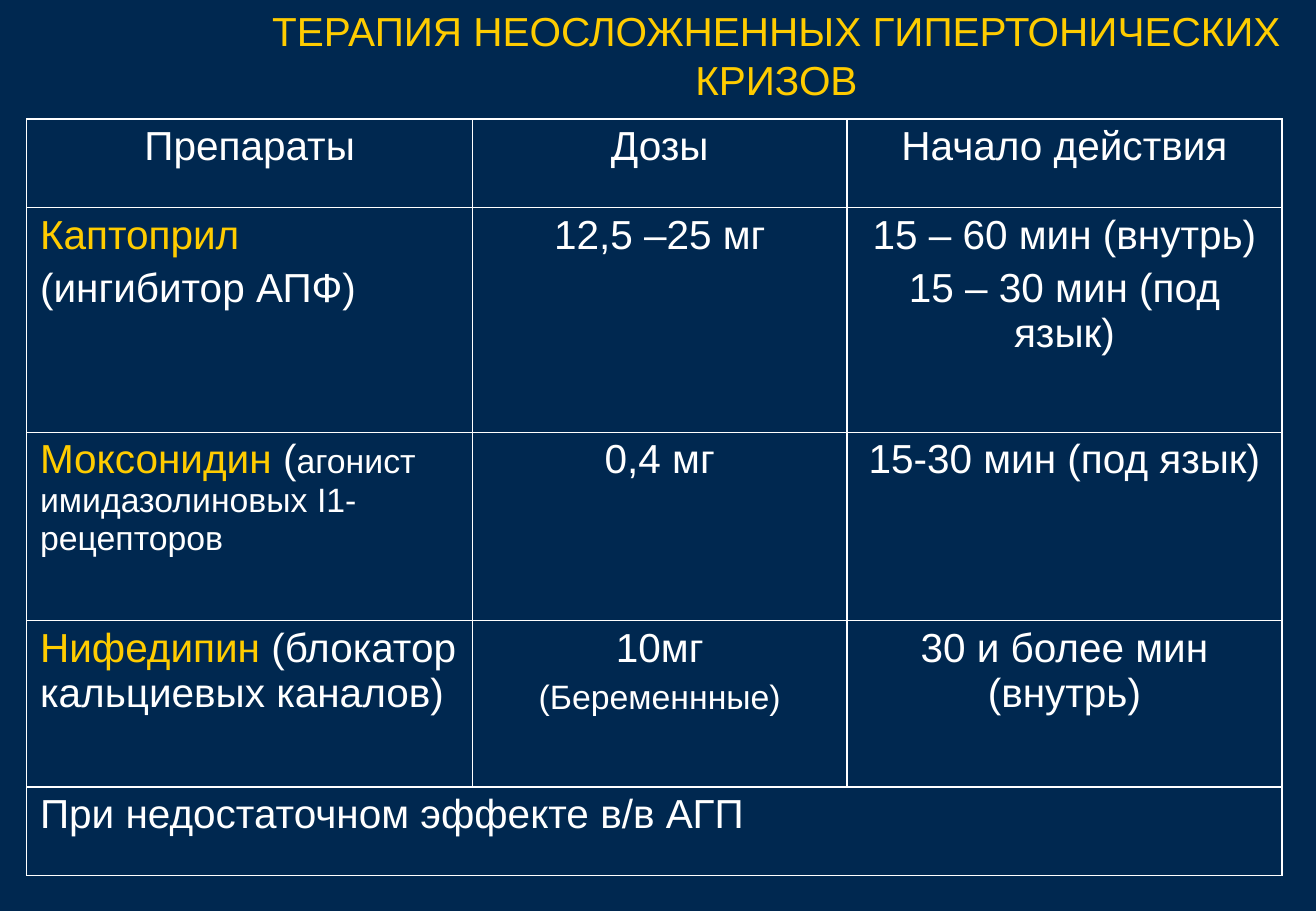
from lxml.etree import SubElement
from pptx import Presentation
from pptx.dml.color import RGBColor
from pptx.enum.text import MSO_ANCHOR, PP_ALIGN
from pptx.oxml.ns import qn
from pptx.util import Inches, Pt

NAVY = RGBColor(0x00, 0x28, 0x50)
GOLD = RGBColor(0xFF, 0xCC, 0x00)
WHITE = RGBColor(0xFF, 0xFF, 0xFF)

TITLE = "ТЕРАПИЯ НЕОСЛОЖНЕННЫХ ГИПЕРТОНИЧЕСКИХ КРИЗОВ"
COLUMN_WIDTHS = [3.67, 3.08, 3.58]
ROW_HEIGHTS = [0.73, 1.85, 1.55, 1.37, 0.73]

DRUG = {"color": GOLD}
SMALL = {"size": 20}
ROWS = [
    [[[("Препараты", {})]], [[("Дозы", {})]], [[("Начало действия", {})]]],
    [
        [[("Каптоприл", DRUG)], [("(ингибитор АПФ)", {})]],
        [[("12,5 –25 мг", {})]],
        [[("15 – 60 мин (внутрь)", {})], [("15 – 30 мин (под язык)", {})]],
    ],
    [
        [[("Моксонидин", DRUG), (" (", {}),
          ("агонист имидазолиновых I1- рецепторов", SMALL)]],
        [[("0,4 мг", {})]],
        [[("15-30 мин (под язык)", {})]],
    ],
    [
        [[("Нифедипин ", DRUG), ("(блокатор кальциевых каналов)", {})]],
        [[("10мг", {})], [("(Беременнные)", SMALL)]],
        [[("30 и более мин (внутрь)", {})]],
    ],
    [[[("При недостаточном эффекте в/в АГП", {})]]],
]


def add_text(para, text, size=24, color=WHITE):
    span = para.add_run()
    span.text = text
    span.font.name = "Arial"
    span.font.size = Pt(size)
    span.font.bold = False
    span.font.color.rgb = color


def fill_cell(cell, paragraphs, align):
    cell.vertical_anchor = MSO_ANCHOR.TOP
    cell.margin_left = cell.margin_right = Inches(0.11)
    cell.margin_top = cell.margin_bottom = Inches(0.04)
    frame = cell.text_frame
    for index, spans in enumerate(paragraphs):
        para = frame.add_paragraph() if index else frame.paragraphs[0]
        para.alignment = align
        para.space_before = Pt(4.8 if index else 0)
        for text, style in spans:
            add_text(para, text, **style)


def outline_cell(cell):
    properties = cell._tc.get_or_add_tcPr()
    for side in ("a:lnL", "a:lnR", "a:lnT", "a:lnB"):
        line = SubElement(properties, qn(side), w=str(Pt(1)))
        fill = SubElement(line, qn("a:solidFill"))
        SubElement(fill, qn("a:srgbClr"), val=str(WHITE))
    cell.fill.background()


def place_title(page, left, top, width, height):
    box = page.shapes.title
    box.left, box.top = Inches(left), Inches(top)
    box.width, box.height = Inches(width), Inches(height)
    frame = box.text_frame
    frame.word_wrap = True
    frame.vertical_anchor = MSO_ANCHOR.TOP
    frame.margin_left = frame.margin_right = Inches(0.09)
    frame.margin_top = frame.margin_bottom = Inches(0.05)
    para = frame.paragraphs[0]
    para.alignment = PP_ALIGN.CENTER
    para.line_spacing = 1.0
    add_text(para, TITLE, color=GOLD)


def place_drug_table(page, left, top, width, height):
    table = page.shapes.add_table(
        len(ROW_HEIGHTS), len(COLUMN_WIDTHS),
        Inches(left), Inches(top), Inches(width), Inches(height)).table
    table.first_row = table.horz_banding = False
    for column, share in zip(table.columns, COLUMN_WIDTHS):
        column.width = Inches(width * share / sum(COLUMN_WIDTHS))
    for row, share in zip(table.rows, ROW_HEIGHTS):
        row.height = Inches(height * share / sum(ROW_HEIGHTS))
    for cell in table.iter_cells():
        outline_cell(cell)
    last = len(ROW_HEIGHTS) - 1
    table.cell(last, 0).merge(table.cell(last, len(COLUMN_WIDTHS) - 1))
    for row_index, row in enumerate(ROWS):
        for column_index, paragraphs in enumerate(row):
            is_left = row_index > 0 and column_index == 0
            align = PP_ALIGN.LEFT if is_left else PP_ALIGN.CENTER
            fill_cell(table.cell(row_index, column_index), paragraphs, align)


def main():
    deck = Presentation()
    deck.slide_width, deck.slide_height = Inches(10.83), Inches(7.5)
    page = deck.slides.add_slide(deck.slide_layouts[5])
    page.background.fill.solid()
    page.background.fill.fore_color.rgb = NAVY
    place_title(page, 1.95, 0, 8.88, 1.25)
    place_drug_table(page, 0.22, 0.98, 10.33, 6.23)
    deck.save("out.pptx")


if __name__ == "__main__":
    main()
